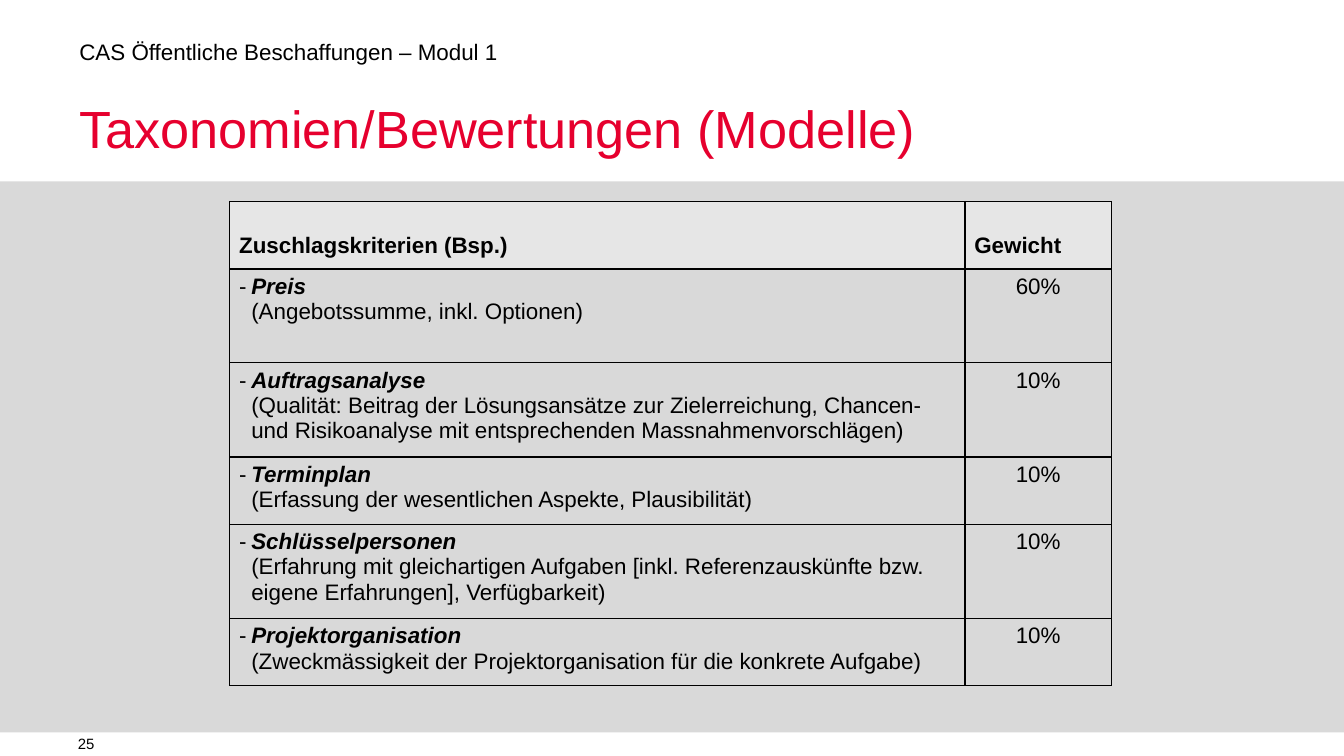
from pptx import Presentation
from pptx.dml.color import RGBColor
from pptx.enum.shapes import MSO_SHAPE
from pptx.enum.text import MSO_ANCHOR, PP_ALIGN
from pptx.oxml.xmlchemy import OxmlElement
from pptx.util import Inches, Pt

# Content
TITLE = "Taxonomien/Bewertungen (Modelle)"
COURSE = "CAS Öffentliche Beschaffungen – Modul 1"
PAGE = "25"
HEADERS = ("Zuschlagskriterien (Bsp.)", "Gewicht")
CRITERIA = [
    ("Preis", "(Angebotssumme, inkl. Optionen)", "60%", 0.7),
    ("Auftragsanalyse",
     "(Qualität: Beitrag der Lösungsansätze zur Zielerreichung, Chancen- "
     "und Risikoanalyse mit entsprechenden Massnahmenvorschlägen)", "10%", 0.7),
    ("Terminplan", "(Erfassung der wesentlichen Aspekte, Plausibilität)", "10%", 0.5),
    ("Schlüsselpersonen",
     "(Erfahrung mit gleichartigen Aufgaben [inkl. Referenzauskünfte bzw. "
     "eigene Erfahrungen], Verfügbarkeit)", "10%", 0.7),
    ("Projektorganisation",
     "(Zweckmässigkeit der Projektorganisation für die konkrete Aufgabe)", "10%", 0.5),
]
COL_WIDTHS = (5.47, 1.09)
HEADER_HEIGHT = 0.5
BLACK, RED, GREY, LIGHT = "000000", "E6002E", "D9D9D9", "E6E6E6"


def paint(color_format, color):
    color_format.rgb = RGBColor.from_string(color)


def style(p, size, color=BLACK, bold=None):
    p.font.name, p.font.size, p.font.bold = "Arial", Pt(size), bold
    paint(p.font.color, color)


def frame(sp, anchor):
    tf = sp.text_frame
    tf.word_wrap = True
    tf.margin_left = tf.margin_top = tf.margin_right = tf.margin_bottom = 0
    tf.vertical_anchor = anchor
    return tf


def add_label(text, box, size, anchor):
    tf = frame(s.shapes.add_textbox(*map(Inches, box)), anchor)
    p = tf.paragraphs[0]
    p.text = text
    style(p, size)
    return p


def add_borders(cell, top, bottom):
    tc_pr = cell._tc.get_or_add_tcPr()
    for side, width in (("L", 0.75), ("R", 0.75), ("T", top), ("B", bottom)):
        ln = OxmlElement(f"a:ln{side}")
        ln.set("w", str(Pt(width)))
        fill = OxmlElement("a:solidFill")
        color = OxmlElement("a:srgbClr")
        color.set("val", BLACK)
        fill.append(color)
        ln.append(fill)
        tc_pr.append(ln)


def add_dash(p):
    p_pr = p._p.get_or_add_pPr()
    p_pr.set("marL", str(Inches(0.09)))
    p_pr.set("indent", str(Inches(-0.09)))
    for tag, key, value in (("a:buFont", "typeface", "Arial"), ("a:buChar", "char", "-")):
        bullet = OxmlElement(tag)
        bullet.set(key, value)
        p_pr.append(bullet)


def prepare(cell, top, bottom):
    cell.margin_left = cell.margin_right = Inches(0.07)
    cell.margin_top = cell.margin_bottom = Inches(0.04)
    add_borders(cell, top, bottom)
    return cell.text_frame.paragraphs[0]


# 16:9 slide
prs = Presentation()
prs.slide_width = Inches(10)
prs.slide_height = prs.slide_width * 9 // 16
s = prs.slides.add_slide(prs.slide_layouts[5])

# Grey content area
area = s.shapes.add_shape(MSO_SHAPE.RECTANGLE, *map(Inches, (0, 1.35, 10, 4.1)))
area.shadow.inherit = False
area.fill.solid()
paint(area.fill.fore_color, GREY)
area.line.fill.background()

# Title, course line and page number
title = s.shapes.title
title.left, title.top, title.width, title.height = map(Inches, (0.59, 0.74, 7.68, 0.45))
tf = frame(title, MSO_ANCHOR.TOP)
p = tf.paragraphs[0]
p.text = TITLE
p.alignment = PP_ALIGN.LEFT
p.line_spacing = Pt(32)
style(p, 28, RED)

course = add_label(COURSE, (0.59, 0.31, 7.68, 0.2), 12, MSO_ANCHOR.TOP)
course.line_spacing = 0.9
add_label(PAGE, (0.58, 5.45, 1.57, 0.17), 8, MSO_ANCHOR.MIDDLE)

# Criteria table
heights = [HEADER_HEIGHT] + [row[-1] for row in CRITERIA]
table = s.shapes.add_table(
    len(heights), len(COL_WIDTHS), Inches(1.71), Inches(1.5),
    Inches(sum(COL_WIDTHS)), Inches(sum(heights))).table
for column, width in zip(table.columns, COL_WIDTHS):
    column.width = Inches(width)
for row, height in zip(table.rows, heights):
    row.height = Inches(height)

for cell, text in zip(table.rows[0].cells, HEADERS):
    p = prepare(cell, 1, 1)
    cell.vertical_anchor = MSO_ANCHOR.BOTTOM
    cell.margin_bottom = Inches(0.08)
    cell.fill.solid()
    paint(cell.fill.fore_color, LIGHT)
    p.text = text
    style(p, 12, bold=True)

for i, (name, detail, weight, _) in enumerate(CRITERIA, 1):
    name_cell, weight_cell = table.rows[i].cells
    top = 1 if i == 1 else 0.75

    p = prepare(name_cell, top, 0.75)
    name_cell.fill.background()
    add_dash(p)
    style(p, 12)
    r = p.add_run()
    r.text = name
    r.font.bold = r.font.italic = True
    p.add_line_break()
    r = p.add_run()
    r.text = detail
    r.font.bold = r.font.italic = False

    p = prepare(weight_cell, top, 0.75)
    weight_cell.fill.background()
    p.text = weight
    p.alignment = PP_ALIGN.CENTER
    style(p, 12, bold=False)

prs.save("out.pptx")
